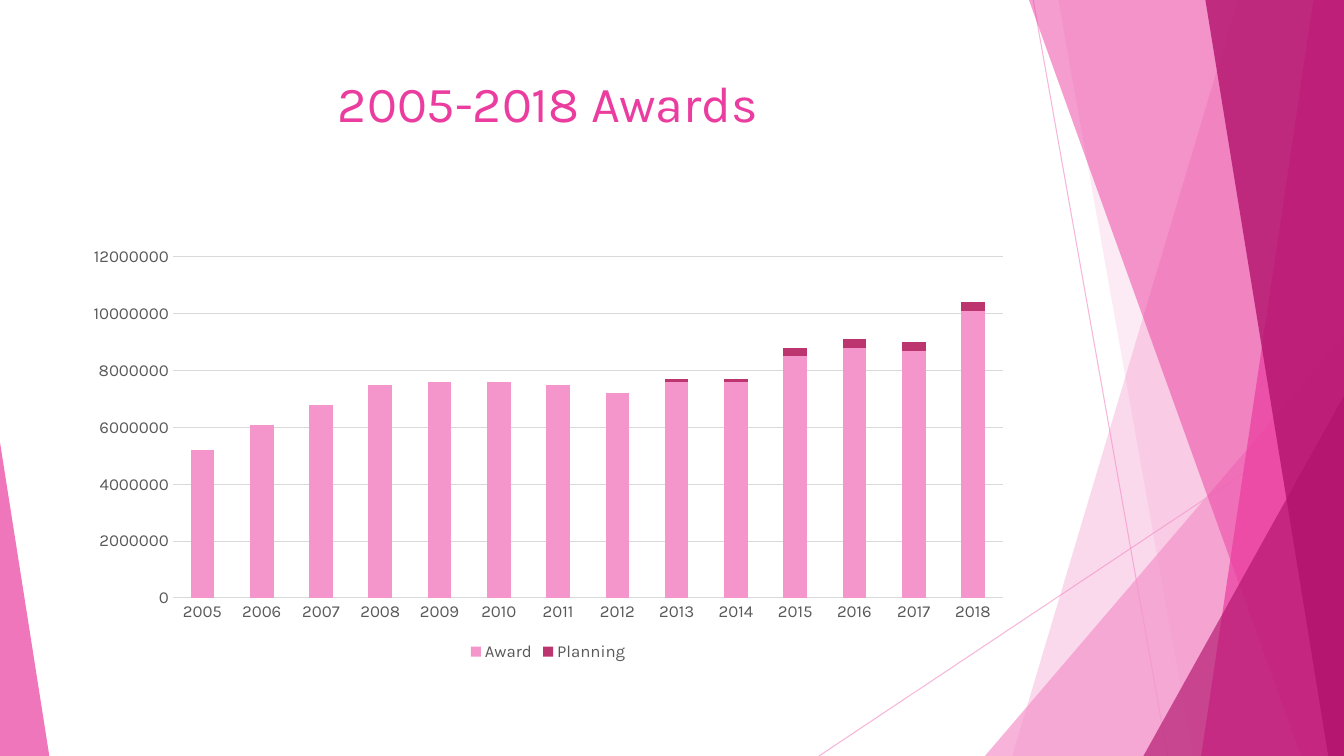
from lxml.etree import SubElement
from pptx import Presentation
from pptx.chart.data import CategoryChartData
from pptx.dml.color import RGBColor
from pptx.enum.chart import XL_CHART_TYPE as CT, XL_LEGEND_POSITION as LP, XL_TICK_MARK as TM
from pptx.enum.shapes import MSO_CONNECTOR as MC, MSO_SHAPE as MS
from pptx.enum.text import MSO_ANCHOR, MSO_AUTO_SIZE, PP_ALIGN
from pptx.oxml.ns import qn
from pptx.util import Pt

PX = 9525
W, H = 1280, 720
FONT = "Karla"
COLORS = {
    "light": "F496CB", "pink": "EB3D9F", "deep": "B2136D",
    "planning": "BC356F", "text": "595959", "grid": "D9D9D9",
}


def rgb(name):
    return RGBColor.from_string(COLORS[name])


def set_color(fmt, name, opacity):
    fmt.solid()
    fmt.fore_color.rgb = rgb(name)
    for clr in fmt._xPr.iter(qn("a:srgbClr")):
        SubElement(clr, qn("a:alpha")).set("val", str(opacity * 1000))


prs = Presentation()
prs.slide_width, prs.slide_height = W * PX, H * PX
s = prs.slides.add_slide(prs.slide_layouts[5])

for x1, y1, x2, y2 in [(984, 0, 1112, H), (W, 387, 780, H)]:
    line = s.shapes.add_connector(MC.STRAIGHT, x1 * PX, y1 * PX, x2 * PX, y2 * PX)
    line.line.width = Pt(0.75)
    set_color(line.line.fill, "light", 70)
    SubElement(line._element.spPr, qn("a:effectLst"))

facets = [
    ("band", 1179, 964, "light", 36),
    ("band", 1008, 1136, "light", 20),
    ("triangle", (938, 320, 342, 400), 1, "light", 72),
    ("band", 980, 1239, "pink", 50),
    ("band", 1251, 1144, "pink", 70),
    ("band", 1148, 1265, "deep", 80),
    ("triangle", (1089, 377, 191, 343), 1, "deep", 66),
    ("triangle", (0, 421, 47, 299), 0, "pink", 70),
]
for kind, a, b, color, opacity in facets:
    if kind == "band":
        fb = s.shapes.build_freeform(a, 0, scale=PX)
        fb.add_line_segments([(W, 0), (W, H), (b, H)], close=True)
        sp = fb.convert_to_shape()
    else:
        sp = s.shapes.add_shape(MS.ISOSCELES_TRIANGLE, *[v * PX for v in a])
        sp.adjustments[0] = b
    set_color(sp.fill, color, opacity)
    sp.line.fill.background()
    sp.shadow.inherit = False

title = s.shapes.title
title.left, title.top, title.width, title.height = [v * PX for v in (71, 64, 902, 138)]
tf = title.text_frame
tf.text = "2005-2018 Awards"
tf.word_wrap = True
tf.auto_size = MSO_AUTO_SIZE.NONE
tf.vertical_anchor = MSO_ANCHOR.TOP
p = tf.paragraphs[0]
p.alignment = PP_ALIGN.CENTER
r = p.runs[0]
r.font.name, r.font.size = FONT, Pt(36)
r.font.color.rgb = rgb("pink")

data = CategoryChartData()
data.categories = [str(year) for year in range(2005, 2019)]
data.add_series("Award", [
    5200000, 6100000, 6800000, 7500000, 7600000, 7600000, 7500000,
    7200000, 7600000, 7600000, 8500000, 8800000, 8700000, 10100000,
])
data.add_series("Planning", [None] * 8 + [100000] * 2 + [300000] * 4)
frame = s.shapes.add_chart(CT.COLUMN_STACKED, *[v * PX for v in (71, 227, 902, 407)], data)
chart = frame.chart
chart.has_title = False
chart.font.name, chart.font.size = FONT, Pt(12)
chart.font.color.rgb = rgb("text")

plot = chart.plots[0]
plot.gap_width, plot.overlap = 150, 100
plot.vary_by_categories = False
for series, color in zip(plot.series, ["light", "planning"]):
    series.format.fill.solid()
    series.format.fill.fore_color.rgb = rgb(color)

chart.has_legend = True
chart.legend.position = LP.BOTTOM
chart.legend.include_in_layout = False

value_axis = chart.value_axis
value_axis.minimum_scale, value_axis.maximum_scale = 0, 12000000
value_axis.major_unit = 2000000
value_axis.has_major_gridlines = True
grid = value_axis.major_gridlines.format.line
grid.width = Pt(0.75)
grid.color.rgb = rgb("grid")
for axis in (chart.category_axis, value_axis):
    axis.major_tick_mark = axis.minor_tick_mark = TM.NONE
    axis.format.line.fill.background()
    axis.tick_labels.font.name = FONT
    axis.tick_labels.font.size = Pt(12)
    axis.tick_labels.font.color.rgb = rgb("text")

prs.save("out.pptx")
